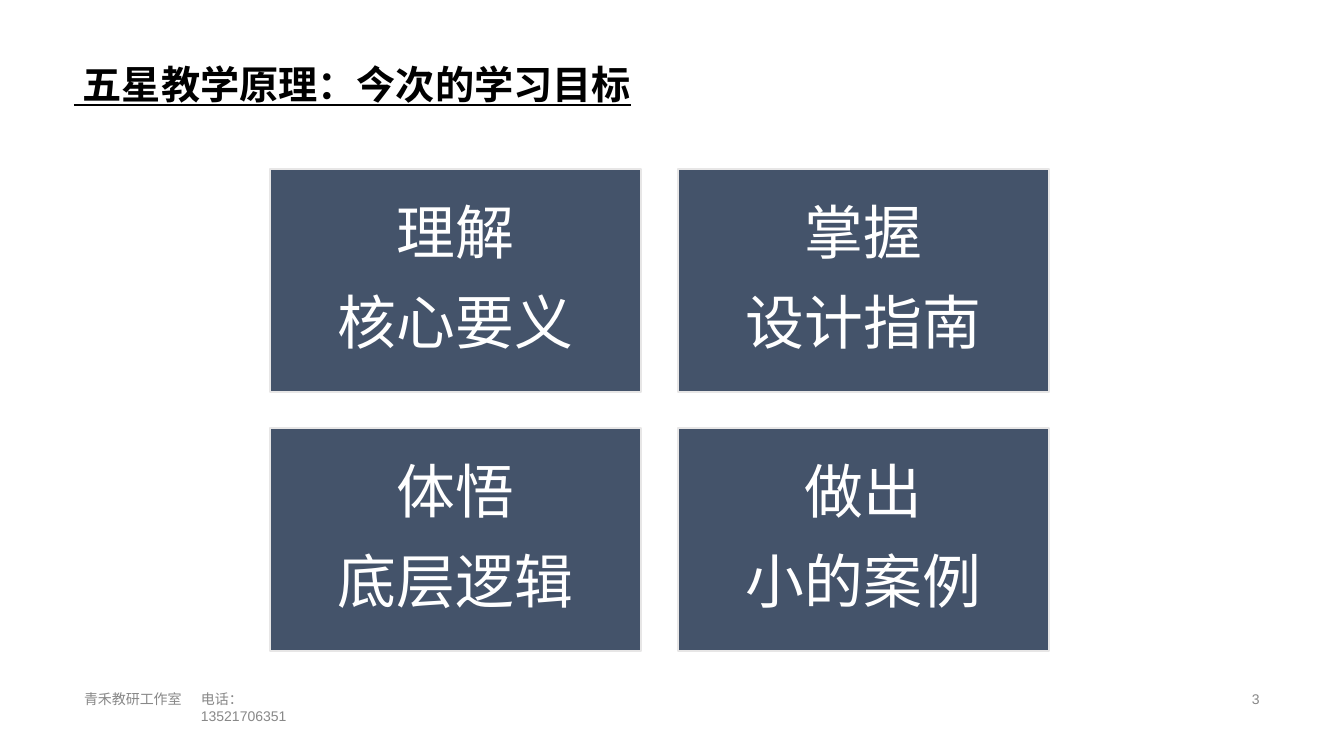
from lxml.etree import SubElement
from pptx import Presentation
from pptx.dml.color import RGBColor
from pptx.enum.shapes import MSO_SHAPE
from pptx.enum.text import MSO_ANCHOR, PP_ALIGN
from pptx.oxml.ns import qn
from pptx.util import Emu, Pt

BLACK = RGBColor(0x00, 0x00, 0x00)
WHITE = RGBColor(0xFF, 0xFF, 0xFF)
GREY = RGBColor(0x88, 0x88, 0x88)
NAVY = RGBColor(0x44, 0x53, 0x6A)
PALE = RGBColor(0xE7, 0xE6, 0xE6)

HAN = "Noto Sans CJK SC"
LATIN = "Arial"
SERIF = "Times New Roman"
WIDE, HIGH = 1344, 756
SCALE = 12192000 / WIDE


def px(count):
    return Emu(round(count * SCALE))


def write(para, text, font=HAN, size=10, color=GREY, bold=False, line=False):
    run = para.add_run()
    run.text = text
    style = run.font
    style.name, style.size = font, Pt(size)
    style.bold, style.underline = bold, line
    style.color.rgb = color
    if font == HAN:
        SubElement(run._r.get_or_add_rPr(), qn("a:ea")).set("typeface", font)


class Deck:
    def __init__(self):
        self.show = Presentation()
        self.show.slide_width, self.show.slide_height = px(WIDE), px(HIGH)
        self.slide = self.show.slides.add_slide(self.show.slide_layouts[6])

    def frame(self, shape, top=0):
        frame = shape.text_frame
        frame.word_wrap = True
        frame.vertical_anchor = MSO_ANCHOR.TOP
        frame.margin_left = frame.margin_right = frame.margin_bottom = 0
        frame.margin_top = px(top)
        return frame.paragraphs[0]

    def label(self, x, y, w, h, top=0):
        box = self.slide.shapes.add_textbox(px(x), px(y), px(w), px(h))
        return self.frame(box, top)

    def card(self, x, y, w, h, verb, goal):
        card = self.slide.shapes.add_shape(
            MSO_SHAPE.RECTANGLE, px(x), px(y), px(w), px(h))
        card.shadow.inherit = False
        card.fill.solid()
        card.fill.fore_color.rgb = NAVY
        card.line.color.rgb = PALE
        card.line.width = Pt(1)
        para = self.frame(card, top=8)
        para.alignment = PP_ALIGN.CENTER
        para.line_spacing = Pt(64)
        write(para, verb, size=42, color=WHITE)
        para.add_line_break()
        write(para, goal, size=42, color=WHITE)


def main():
    deck = Deck()

    # Title
    title = deck.label(74, 58, 1198, 50, top=2)
    write(title, " ", font=SERIF, size=28, color=BLACK, line=True)
    write(title, "五星教学原理：今次的学习目标", size=28, color=BLACK,
          bold=True, line=True)

    # Goals in a two by two grid
    goals = [("理解", "核心要义"), ("掌握", "设计指南"),
             ("体悟", "底层逻辑"), ("做出", "小的案例")]
    for spot, (verb, goal) in enumerate(goals):
        row, col = divmod(spot, 2)
        deck.card(270 + col * 408, 169 + row * 259, 371, 223, verb, goal)

    # Footer
    write(deck.label(84, 689, 101, 21, top=1), "青禾教研工作室")
    phone = deck.label(201, 689, 130, 38, top=2)
    write(phone, "电话：")
    phone.add_line_break()
    write(phone, "13521706351", font=LATIN)
    write(deck.label(1252, 691, 13, 18), "3", font=LATIN)

    deck.show.save("out.pptx")


if __name__ == "__main__":
    main()
